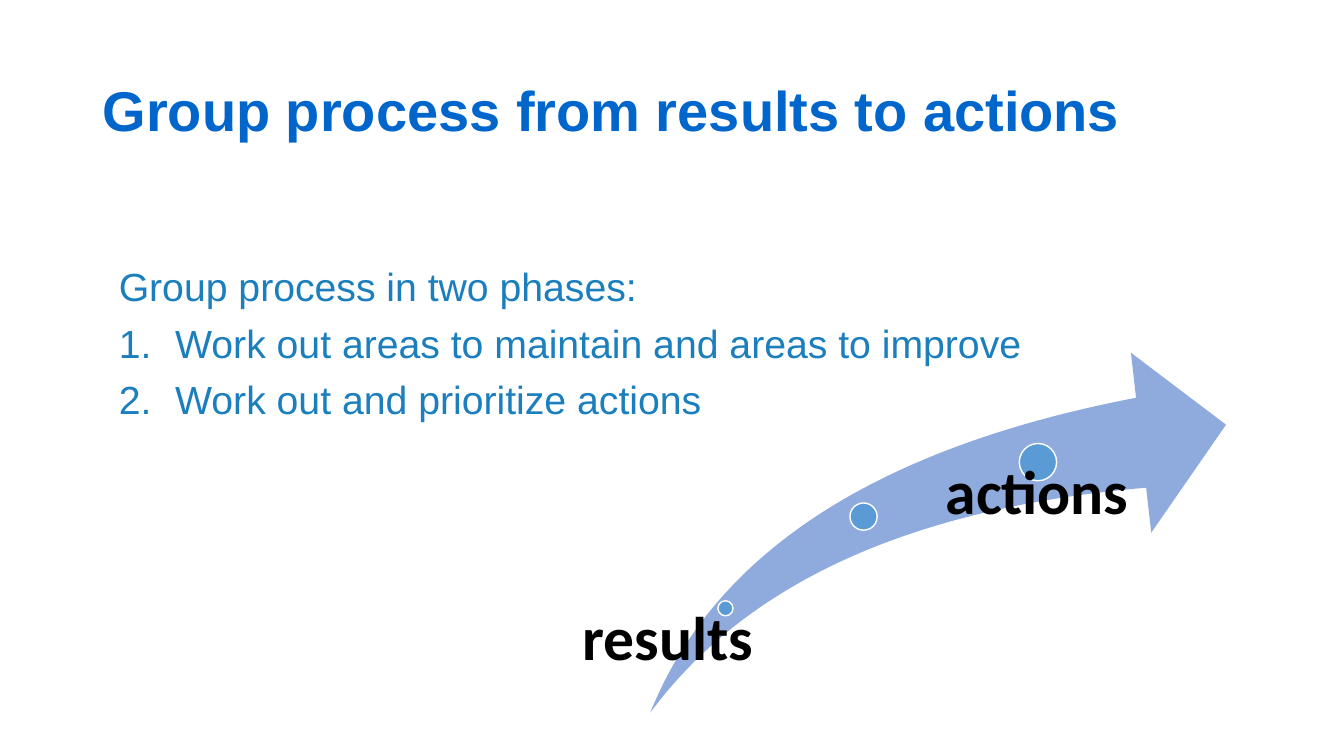
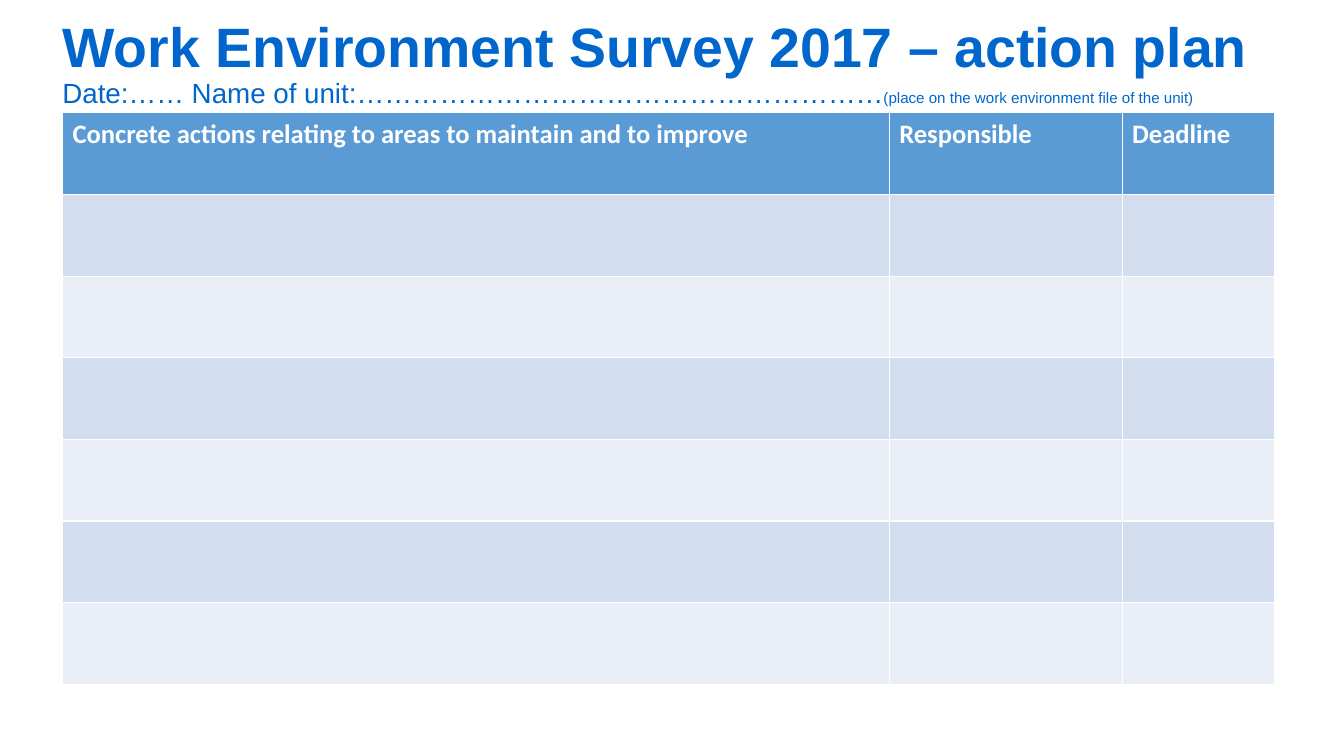
from dataclasses import dataclass

from lxml import etree
from pptx import Presentation
from pptx.dml.color import RGBColor
from pptx.enum.shapes import MSO_SHAPE
from pptx.enum.text import MSO_ANCHOR
from pptx.oxml.ns import qn
from pptx.shapes.autoshape import Shape
from pptx.slide import Slide
from pptx.table import _Cell
from pptx.text.text import TextFrame, _Paragraph, _Run
from pptx.util import Inches, Pt

OVAL = MSO_SHAPE.OVAL
SWOOSH_ARROW = MSO_SHAPE.SWOOSH_ARROW
TOP = MSO_ANCHOR.TOP
MIDDLE = MSO_ANCHOR.MIDDLE

TITLE_BLUE = "0066CC"
BODY_BLUE = "1C7FBD"
ARROW_BLUE = "8FAADC"
ACCENT_BLUE = "5B9BD5"
BANDS = ("D2DEEF", "EAEFF7")
WHITE = "FFFFFF"
BLACK = "000000"
HEADING_FONT = "Arial"
LABEL_FONT = "Calibri"


@dataclass(frozen=True)
class Box:
    left: float
    top: float
    width: float
    height: float

    def lengths(self) -> tuple[Inches, Inches, Inches, Inches]:
        return Inches(self.left), Inches(self.top), Inches(self.width), Inches(self.height)


@dataclass(frozen=True)
class TextStyle:
    font: str
    size: float
    color: str
    bold: bool = False


@dataclass(frozen=True)
class Label:
    text: str
    box: Box
    left_inset: float


@dataclass(frozen=True)
class Column:
    heading: str
    width: float


TITLE_STYLE = TextStyle(HEADING_FONT, 40, TITLE_BLUE, True)
PLAN_TITLE_STYLE = TextStyle(HEADING_FONT, 39.6, TITLE_BLUE, True)
UNIT_STYLE = TextStyle(HEADING_FONT, 19.8, TITLE_BLUE)
NOTE_STYLE = TextStyle(HEADING_FONT, 10.8, TITLE_BLUE)
BODY_STYLE = TextStyle(HEADING_FONT, 28, BODY_BLUE)
LABEL_STYLE = TextStyle(LABEL_FONT, 44, BLACK, True)
HEADER_STYLE = TextStyle(LABEL_FONT, 19, WHITE, True)

PHASES_HEADING = "Group process in two phases:"
PHASES = (
    "Work out areas to maintain and areas to improve",
    "Work out and prioritize actions",
)
DOTS = (
    Box(7.12, 5.96, 0.15, 0.15),
    Box(8.43, 4.99, 0.27, 0.27),
    Box(10.11, 4.4, 0.37, 0.37),
)
LABELS = (
    Label("results", Box(5.7, 6.03, 4.33, 1.03), 0.08),
    Label("actions", Box(9.18, 4.58, 3.4, 2.48), 0.2),
)
COLUMNS = (
    Column("Concrete actions relating to areas to maintain and to improve", 8.2),
    Column("Responsible", 2.31),
    Column("Deadline", 1.51),
)
ROW_COUNT = 7
ROW_HEIGHT = 0.81


def color(value: str) -> RGBColor:
    return RGBColor.from_string(value)


def format_run(run: _Run, style: TextStyle) -> None:
    run.font.name = style.font
    run.font.size = Pt(style.size)
    run.font.bold = style.bold
    run.font.color.rgb = color(style.color)


def write(paragraph: _Paragraph, text: str, style: TextStyle, space_before: float = 0) -> None:
    paragraph.text = text
    paragraph.line_spacing = 0.9
    paragraph.space_before = Pt(space_before)
    format_run(paragraph.runs[0], style)


def add_text_frame(slide: Slide, box: Box, anchor: MSO_ANCHOR = TOP) -> TextFrame:
    text_frame = slide.shapes.add_textbox(*box.lengths()).text_frame
    text_frame.word_wrap = True
    text_frame.vertical_anchor = anchor
    return text_frame


def add_title(slide: Slide, text: str, box: Box, style: TextStyle, anchor: MSO_ANCHOR) -> TextFrame:
    text_frame = add_text_frame(slide, box, anchor)
    write(text_frame.paragraphs[0], text, style)
    return text_frame


def add_filled_shape(slide: Slide, kind: MSO_SHAPE, box: Box, fill: str) -> Shape:
    shape = slide.shapes.add_shape(kind, *box.lengths())
    shape.shadow.inherit = False
    shape.fill.solid()
    shape.fill.fore_color.rgb = color(fill)
    shape.line.fill.background()
    return shape


def number_paragraph(paragraph: _Paragraph, indent: float) -> None:
    properties = paragraph._p.get_or_add_pPr()
    properties.set("marL", str(Inches(indent)))
    properties.set("indent", str(-Inches(indent)))
    etree.SubElement(properties, qn("a:buFont"), typeface="+mj-lt")
    etree.SubElement(properties, qn("a:buAutoNum"), type="arabicPeriod")


def add_phases(slide: Slide) -> None:
    text_frame = add_text_frame(slide, Box(1.08, 2.61, 11.34, 3.4))
    write(text_frame.paragraphs[0], PHASES_HEADING, BODY_STYLE, 10)
    for phase in PHASES:
        paragraph = text_frame.add_paragraph()
        write(paragraph, phase, BODY_STYLE, 10)
        number_paragraph(paragraph, 0.56)


def add_label(slide: Slide, label: Label) -> None:
    text_frame = add_text_frame(slide, label.box)
    text_frame.margin_left = Inches(label.left_inset)
    text_frame.margin_top = text_frame.margin_right = text_frame.margin_bottom = 0
    write(text_frame.paragraphs[0], label.text, LABEL_STYLE)


def add_arrow(slide: Slide) -> None:
    arrow = add_filled_shape(slide, SWOOSH_ARROW, Box(6.45, 3.5, 5.71, 3.57), ARROW_BLUE)
    arrow.adjustments[0] = 0.25
    arrow.adjustments[1] = 0.25
    for box in DOTS:
        dot = add_filled_shape(slide, OVAL, box, ACCENT_BLUE)
        dot.line.color.rgb = color(WHITE)
        dot.line.width = Pt(1)
    for label in LABELS:
        add_label(slide, label)


def format_cell(cell: _Cell, fill: str) -> None:
    properties = cell._tc.get_or_add_tcPr()
    for side in ("a:lnL", "a:lnR", "a:lnT", "a:lnB"):
        border = etree.SubElement(properties, qn(side), w=str(Pt(1)))
        solid = etree.SubElement(border, qn("a:solidFill"))
        etree.SubElement(solid, qn("a:srgbClr"), val=WHITE)
    cell.fill.solid()
    cell.fill.fore_color.rgb = color(fill)


def add_action_table(slide: Slide) -> None:
    width = sum(column.width for column in COLUMNS)
    box = Box(0.62, 1.12, width, ROW_COUNT * ROW_HEIGHT)
    table = slide.shapes.add_table(ROW_COUNT, len(COLUMNS), *box.lengths()).table
    for row in table.rows:
        row.height = Inches(ROW_HEIGHT)
    for column_index, column in enumerate(COLUMNS):
        table.columns[column_index].width = Inches(column.width)
        for row_index in range(ROW_COUNT):
            fill = BANDS[(row_index - 1) % 2] if row_index else ACCENT_BLUE
            format_cell(table.cell(row_index, column_index), fill)
        paragraph = table.cell(0, column_index).text_frame.paragraphs[0]
        paragraph.text = column.heading
        format_run(paragraph.runs[0], HEADER_STYLE)


def build_process_slide(slide: Slide) -> None:
    add_title(slide, "Group process from results to actions",
              Box(0.92, 0.4, 11.5, 1.45), TITLE_STYLE, MIDDLE)
    add_phases(slide)
    add_arrow(slide)


def build_plan_slide(slide: Slide) -> None:
    text_frame = add_title(slide, "Work Environment Survey 2017 – action plan",
                           Box(0.52, 0.15, 12.12, 0.88), PLAN_TITLE_STYLE, TOP)
    paragraph = text_frame.add_paragraph()
    write(paragraph, "Date:…… Name of unit:…………………………………………………", UNIT_STYLE)
    note = paragraph.add_run()
    note.text = "(place on the work environment file of the unit)"
    format_run(note, NOTE_STYLE)
    add_action_table(slide)


def main() -> None:
    presentation = Presentation()
    presentation.slide_width = Inches(13.33)
    presentation.slide_height = Inches(7.5)
    blank_layout = presentation.slide_layouts[6]
    for build in (build_process_slide, build_plan_slide):
        build(presentation.slides.add_slide(blank_layout))
    presentation.save("out.pptx")


if __name__ == "__main__":
    main()
